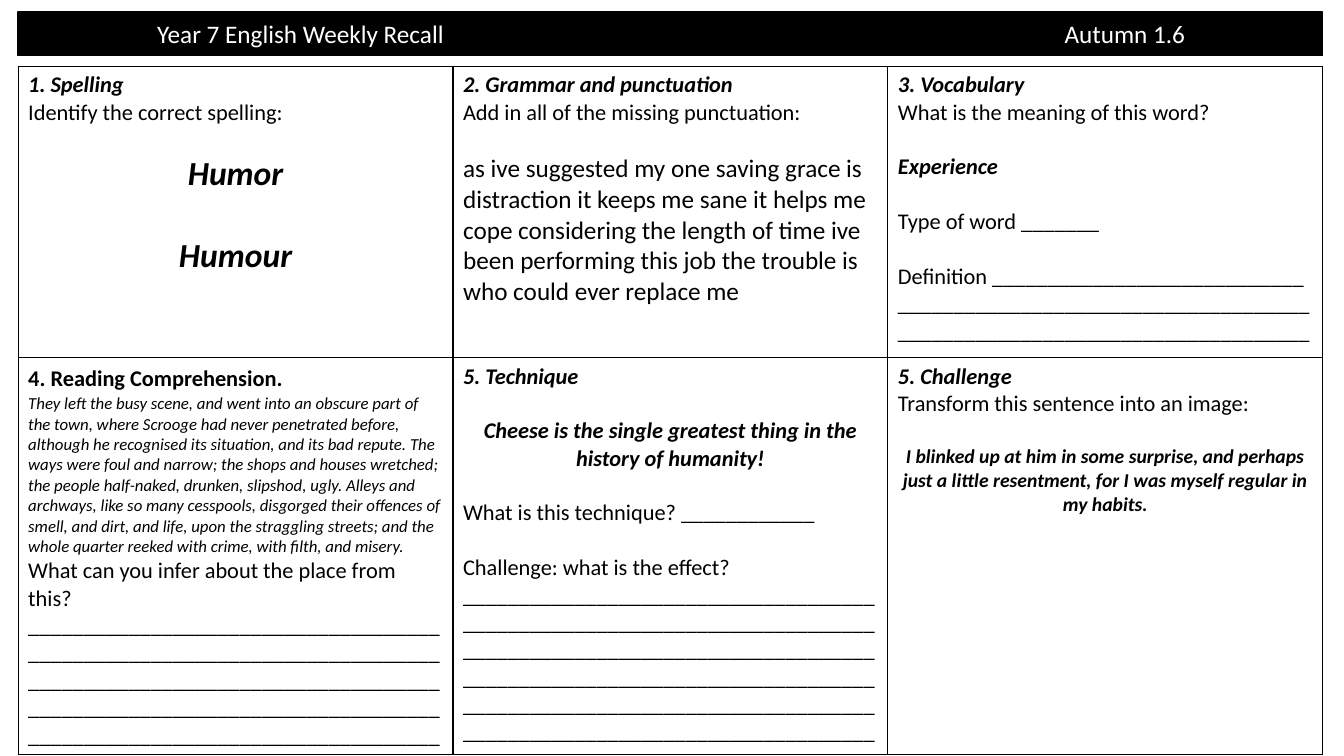
import pptx
import pptx.dml.color
import pptx.enum.shapes
import pptx.enum.text
import pptx.oxml
import pptx.oxml.ns
import pptx.util
from lxml import etree

FONT = "Calibri"
BLACK, WHITE = "000000", "FFFFFF"
LEFT, WIDTH = 0.18, 12.94
COLUMNS = 3
ROW_HEIGHTS = (2.89, 3.73)
RULE_LENGTH = 37  # underscores that fill one line of a cell
LINE = 19.5       # points taken by one 16 pt line
BIG_LINE = 29.3   # points taken by one 24 pt line
inches = pptx.util.Inches
points = pptx.util.Pt


def color(value):
    return pptx.dml.color.RGBColor.from_string(value)


def rules(lines):
    return "_" * (RULE_LENGTH * lines)


def add_run(paragraph, text, size=16, style="", fill=BLACK):
    run = paragraph.add_run()
    run.text = text
    font = run.font
    font.name, font.size = FONT, points(size)
    font.bold, font.italic = "b" in style, "i" in style
    font.color.rgb = color(fill)


def entry(*runs, gap=0, center=False):
    """One paragraph: runs of (text, size, style), with a gap above."""
    return runs, gap, center


def heading(text):
    return entry((text, 16, "bi"))


def plain(text, gap=0):
    return entry((text, 16, ""), gap=gap)


def quote(text, size, gap):
    return entry((text, size, "bi"), gap=gap, center=True)


TASKS = [
    [
        [heading("1. Spelling"),
         plain("Identify the correct spelling:"),
         quote("Humor", 24, LINE),
         quote("Humour", 24, BIG_LINE)],
        [heading("2. Grammar and punctuation"),
         plain("Add in all of the missing punctuation:"),
         entry(("as ive suggested my one saving grace is distraction it keeps me sane "
                "it helps me cope considering the length of time ive been performing "
                "this job the trouble is who could ever replace me", 18, ""), gap=LINE)],
        [heading("3. Vocabulary"),
         plain("What is the meaning of this word?"),
         entry(("Experience", 16, "bi"), gap=LINE),
         plain("Type of word " + "_" * 7, LINE),
         plain("Definition " + "_" * 28 + " " + rules(2), LINE)],
    ],
    [
        [entry(("4. Reading Comprehension.", 16, "b"), (" ", 18, "")),
         entry(("They left the busy scene, and went into an obscure part of the town, "
                "where Scrooge had never penetrated before, although he recognised its "
                "situation, and its bad repute. The ways were foul and narrow; the shops "
                "and houses wretched; the people half-naked, drunken, slipshod, ugly. "
                "Alleys and archways, like so many cesspools, disgorged their offences of "
                "smell, and dirt, and life, upon the straggling streets; and the whole "
                "quarter reeked with crime, with filth, and misery.", 12, "i")),
         plain("What can you infer about the place from this?"),
         plain(rules(5))],
        [heading("5. Technique"),
         quote("Cheese is the single greatest thing in the history of humanity!", 16, LINE),
         plain("What is this technique? " + "_" * 12, LINE),
         plain("Challenge: what is the effect? " + rules(6), LINE)],
        [heading("5. Challenge"),
         plain("Transform this sentence into an image:"),
         quote("I blinked up at him in some surprise, and perhaps just a little "
               "resentment, for I was myself regular in my habits.", 14, LINE)],
    ],
]


def add_banner(slide, left, top, width, height):
    """Title bar, with the term set at a tab stop."""
    banner = slide.shapes.add_shape(
        pptx.enum.shapes.MSO_SHAPE.RECTANGLE,
        inches(left), inches(top), inches(width), inches(height))
    banner.shadow.inherit = False
    banner.fill.solid()
    banner.fill.fore_color.rgb = color(BLACK)
    banner.line.color.rgb = color(BLACK)
    banner.line.width = points(1)
    frame = banner.text_frame
    frame.word_wrap = True
    frame.vertical_anchor = pptx.enum.text.MSO_ANCHOR.MIDDLE
    frame.margin_left = inches(1.38)
    paragraph = frame.paragraphs[0]
    paragraph.alignment = pptx.enum.text.PP_ALIGN.LEFT
    add_run(paragraph, "Year 7 English Weekly Recall\tAutumn 1.6", 18, fill=WHITE)
    qn = pptx.oxml.ns.qn
    properties = paragraph._p.get_or_add_pPr()
    tabs = etree.SubElement(properties, qn("a:tabLst"))
    etree.SubElement(tabs, qn("a:tab"), pos=str(inches(9)), algn="l")


def add_borders(cell):
    properties = cell._tc.get_or_add_tcPr()
    for index, side in enumerate(("lnL", "lnR", "lnT", "lnB")):
        properties.insert(index, pptx.oxml.parse_xml(
            f'<a:{side} {pptx.oxml.ns.nsdecls("a")} w="{points(1)}">'
            f'<a:solidFill><a:srgbClr val="{BLACK}"/></a:solidFill></a:{side}>'))


def fill_cell(cell, entries):
    cell.fill.solid()
    cell.fill.fore_color.rgb = color(WHITE)
    add_borders(cell)
    frame = cell.text_frame
    alignments = pptx.enum.text.PP_ALIGN
    for index, (runs, gap, center) in enumerate(entries):
        paragraph = frame.add_paragraph() if index else frame.paragraphs[0]
        paragraph.alignment = alignments.CENTER if center else alignments.LEFT
        paragraph.space_before = points(gap)
        for run in runs:
            add_run(paragraph, *run)


def add_tasks(slide, left, top, width):
    """Grid of six recall tasks."""
    table = slide.shapes.add_table(
        len(ROW_HEIGHTS), COLUMNS, inches(left), inches(top),
        inches(width), inches(sum(ROW_HEIGHTS))).table
    table.first_row = table.horz_banding = False
    for column in table.columns:
        column.width = inches(width / COLUMNS)
    for row, height, tasks in zip(table.rows, ROW_HEIGHTS, TASKS):
        row.height = inches(height)
        for cell, entries in zip(row.cells, tasks):
            fill_cell(cell, entries)


def main():
    presentation = pptx.Presentation()
    presentation.slide_width = inches(13.33)
    presentation.slide_height = inches(7.5)
    slide = presentation.slides.add_slide(presentation.slide_layouts[6])
    add_banner(slide, LEFT, 0.12, WIDTH, 0.43)
    add_tasks(slide, LEFT, 0.66, WIDTH)
    presentation.save("out.pptx")


if __name__ == "__main__":
    main()
